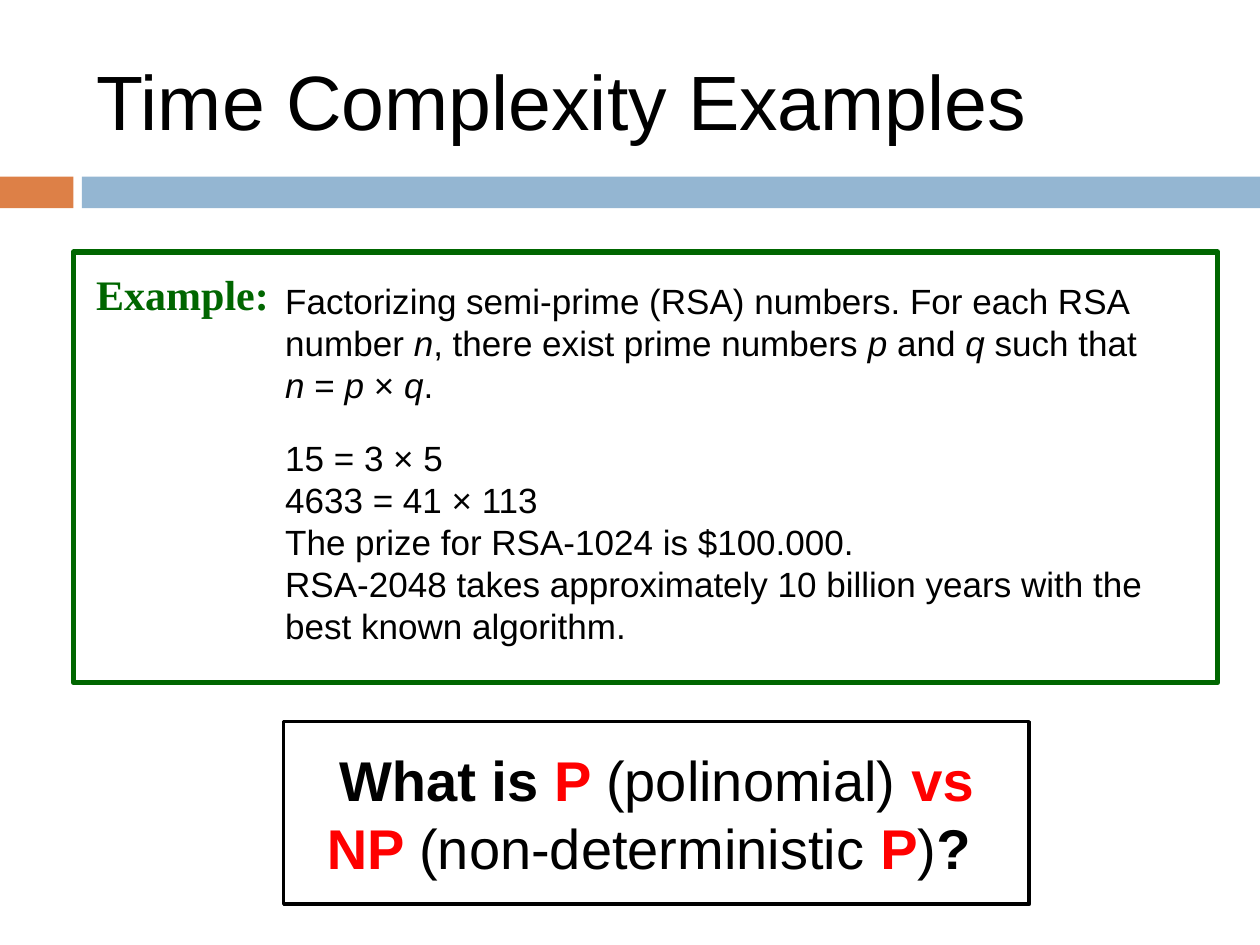
from pptx import Presentation
from pptx.dml.color import RGBColor
from pptx.enum.shapes import MSO_SHAPE as Shape
from pptx.enum.text import MSO_ANCHOR as Anchor, PP_ALIGN as Align
from pptx.util import Cm, Pt

COLORS = {
    "text": "000000",
    "orange": "DD8047",
    "blue": "94B6D2",
    "green": "006600",
    "red": "FF0000",
}
LINE_PITCH = 1.2


def color(name):
    return RGBColor.from_string(COLORS[name])


def add_rect(slide, box, fill=None, line=None, width=1):
    rect = slide.shapes.add_shape(Shape.RECTANGLE, *map(Cm, box))
    rect.shadow.inherit = False
    if fill:
        rect.fill.solid()
        rect.fill.fore_color.rgb = color(fill)
    else:
        rect.fill.background()
    if line:
        rect.line.color.rgb = color(line)
        rect.line.width = Pt(width)
    else:
        rect.line.fill.background()
    return rect


def write(shape, paragraphs, size, ink="text", font="Arial", bold=None,
          align=Align.LEFT, anchor=Anchor.TOP):
    """Each paragraph is a list of (text, style); style is "", "i", "b" or "red"."""
    frame = shape.text_frame
    frame.word_wrap = True
    frame.vertical_anchor = anchor
    for index, pieces in enumerate(paragraphs):
        paragraph = frame.paragraphs[0] if index == 0 else frame.add_paragraph()
        paragraph.alignment = align
        paragraph.line_spacing = Pt(size * LINE_PITCH)
        paragraph.font.name = font
        paragraph.font.size = Pt(size)
        paragraph.font.bold = bold
        paragraph.font.color.rgb = color(ink)
        for text, style in pieces:
            run = paragraph.add_run()
            run.text = text
            if style == "i":
                run.font.italic = True
            elif style:
                run.font.bold = True
            if style == "red":
                run.font.color.rgb = color("red")


def add_text(slide, box, paragraphs, size, **style):
    write(slide.shapes.add_textbox(*map(Cm, box)), paragraphs, size, **style)


def add_header(slide, left, top, width, height):
    # Two-part band along the bottom edge
    band, marker, gap = 0.64, 1.48, 0.17
    band_top = top + height - band
    rest = left + marker + gap
    add_rect(slide, (left, band_top, marker, band), fill="orange")
    add_rect(slide, (rest, band_top, width - marker - gap, band), fill="blue")
    # Title
    add_text(slide, (left + 1.7, top + 0.64, 22.66, 2.74),
             [[("Time Complexity Examples", "")]], 44, anchor=Anchor.MIDDLE)


def add_example(slide, left, top, width, height):
    add_rect(slide, (left, top, width, height), line="green", width=3)
    add_text(slide, (left + 0.21, top + 0.21, 4.02, 1.27),
             [[("Example:", "")]], 24, ink="green", font="Times New Roman", bold=True)

    # Statement of the problem
    body_left = left + 4.02
    statement = [
        ("Factorizing semi-prime (RSA) numbers. For each RSA number ", ""),
        ("n", "i"), (", there exist prime numbers ", ""), ("p", "i"),
        (" and ", ""), ("q", "i"), (" such that ", ""), ("n", "i"),
        (" = ", ""), ("p", "i"), (" × ", ""), ("q", "i"), (".", ""),
    ]
    add_text(slide, (body_left, top + 0.42, 18.2, 3.68), [statement], 20)

    # Sample numbers
    facts = [
        "15 = 3 × 5",
        "4633 = 41 × 113",
        "The prize for RSA-1024 is $100.000.",
        "RSA-2048 takes approximately 10 billion years with the best known algorithm.",
    ]
    add_text(slide, (body_left, top + 3.6, 18.63, 4.52),
             [[(fact, "")] for fact in facts], 20)


def add_question(slide, left, top, width, height):
    frame = add_rect(slide, (left, top, width, height), line="text", width=2)
    question = [
        ("What is ", "b"), ("P ", "red"), ("(polinomial) ", ""), ("vs NP ", "red"),
        ("(non-deterministic ", ""), ("P", "red"), (")", ""), ("? ", "b"),
    ]
    write(frame, [question], 32, align=Align.CENTER, anchor=Anchor.MIDDLE)


def main():
    prs = Presentation()
    prs.slide_width, prs.slide_height = Cm(25.4), Cm(19.05)
    slide = prs.slides.add_slide(prs.slide_layouts[6])
    add_header(slide, 0, 0, 25.4, 4.2)
    add_example(slide, 1.48, 5.08, 23.07, 8.68)
    add_question(slide, 5.72, 14.55, 15.03, 3.68)
    prs.save("out.pptx")


if __name__ == "__main__":
    main()
